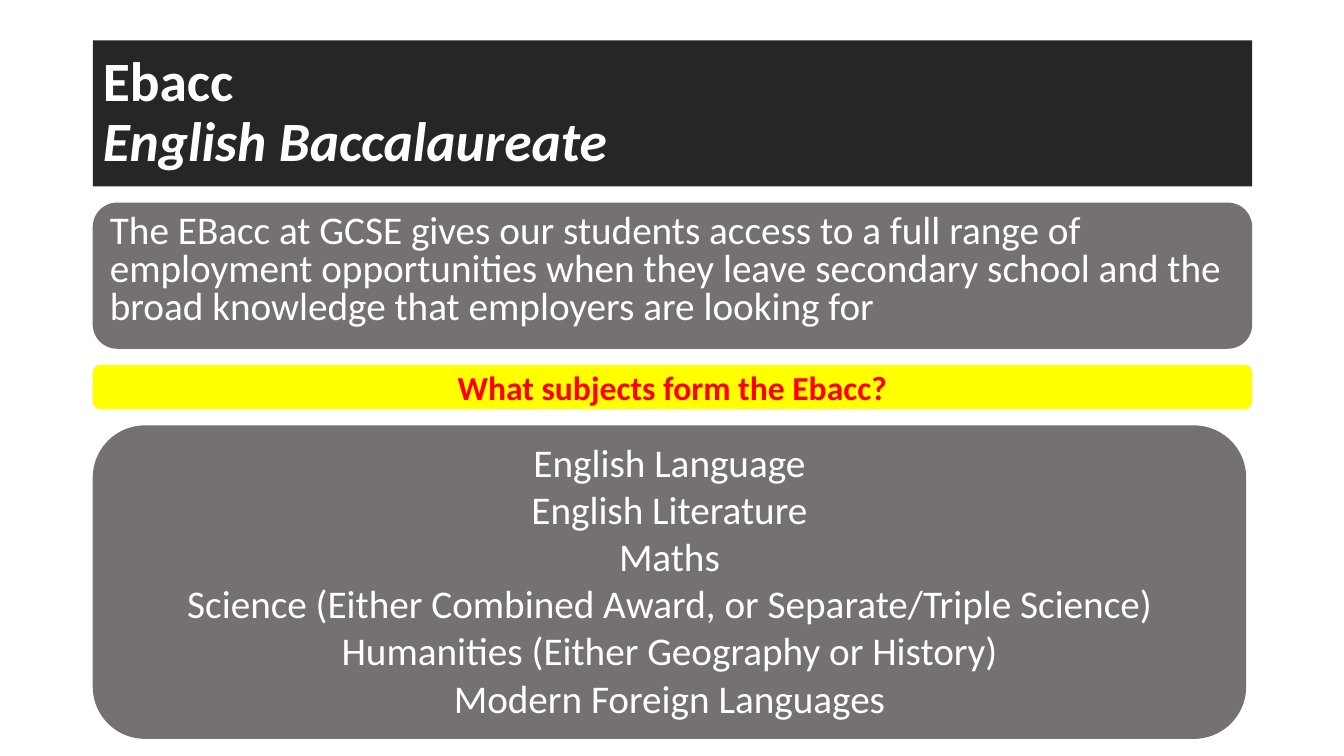
"""Build the Ebacc slide: title band, introduction, question and subject list."""
from dataclasses import dataclass

from lxml import etree
from pptx import Presentation, util as u
from pptx.dml.color import RGBColor
from pptx.enum import shapes, text
from pptx.oxml import ns

HEADING = ("Ebacc", "English Baccalaureate")
INTRODUCTION = (
    "The EBacc at GCSE gives our students access to a full range of employment "
    "opportunities when they leave secondary school and the broad knowledge "
    "that employers are looking for"
)
QUESTION = "What subjects form the Ebacc?"
SUBJECTS = [
    "English Language",
    "English Literature",
    "Maths",
    "Science (Either Combined Award, or Separate/Triple Science)",
    "Humanities (Either Geography or History)",
    "Modern Foreign Languages",
]

SLIDE_SIZE = (13.33, 7.5)
LEFT, TOP, GAP = 0.92, 0.4, 0.16
BAND_SIZES = [(11.5, 1.45), (11.5, 1.45), (11.5, 0.44), (11.44, 3.11)]


@dataclass(frozen=True)
class Theme:
    """Colours, font and type sizes of the slide."""
    font: str = "Calibri"
    dark: str = "262626"
    grey: str = "767171"
    yellow: str = "FFFF00"
    red: str = "FF0000"
    white: str = "FFFFFF"
    heading: float = 39.6
    reading: float = 28
    question: float = 24


THEME = Theme()


def band_box(row):
    """Return left, top, width and height of a band in the stack."""
    top = TOP + sum(height + GAP for _, height in BAND_SIZES[:row])
    return [u.Inches(length) for length in (LEFT, top, *BAND_SIZES[row])]


def paint(band, colour, anchor):
    """Fill a band and prepare its text frame."""
    band.fill.solid()
    band.fill.fore_color.rgb = RGBColor.from_string(colour)
    band.line.fill.background()
    frame = band.text_frame
    frame.word_wrap = True
    frame.auto_size = text.MSO_AUTO_SIZE.NONE
    frame.vertical_anchor = anchor
    return frame


def place(placeholder, row, preset):
    """Move a placeholder to its band and give it an outline."""
    placeholder.left, placeholder.top, placeholder.width, placeholder.height = band_box(row)
    outline = etree.SubElement(placeholder.element.spPr, ns.qn("a:prstGeom"), prst=preset)
    etree.SubElement(outline, ns.qn("a:avLst"))


def add_band(slide, row, preset):
    """Add a shadowless shape at its band."""
    band = slide.shapes.add_shape(preset, *band_box(row))
    band.shadow.inherit = False
    return band


def style(paragraph, size, colour, align, spacing, after=0, bold=False):
    """Set the type and spacing of a paragraph."""
    paragraph.alignment = align
    paragraph.line_spacing = spacing
    paragraph.space_before = u.Pt(0)
    paragraph.space_after = u.Pt(after)
    paragraph.font.name = THEME.font
    paragraph.font.size = u.Pt(size)
    paragraph.font.bold = bold
    paragraph.font.color.rgb = RGBColor.from_string(colour)


def main():
    """Assemble and save the slide."""
    deck = Presentation()
    deck.slide_width, deck.slide_height = map(u.Inches, SLIDE_SIZE)
    slide = deck.slides.add_slide(deck.slide_layouts[1])
    left, centre = text.PP_ALIGN.LEFT, text.PP_ALIGN.CENTER
    top, middle = text.MSO_ANCHOR.TOP, text.MSO_ANCHOR.MIDDLE

    title = slide.shapes.title
    place(title, 0, "rect")
    heading = paint(title, THEME.dark, middle).paragraphs[0]
    heading.add_run().text = HEADING[0]
    heading.add_line_break()
    full_name = heading.add_run()
    full_name.text = HEADING[1]
    full_name.font.italic = True
    style(heading, THEME.heading, THEME.white, left, 0.9, bold=True)

    body = slide.placeholders[1]
    place(body, 1, "roundRect")
    introduction = paint(body, THEME.grey, top).paragraphs[0]
    introduction.text = INTRODUCTION
    properties = introduction._p.get_or_add_pPr()
    properties.set("marL", "0")
    properties.set("indent", "0")
    etree.SubElement(properties, ns.qn("a:buNone"))
    style(introduction, THEME.reading, THEME.white, left, 0.8)

    question_band = add_band(slide, 2, shapes.MSO_SHAPE.ROUNDED_RECTANGLE)
    question = paint(question_band, THEME.yellow, middle).paragraphs[0]
    question.text = QUESTION
    style(question, THEME.question, THEME.red, centre, 1.0, bold=True)

    subject_band = add_band(slide, 3, shapes.MSO_SHAPE.FLOWCHART_ALTERNATE_PROCESS)
    subject_list = paint(subject_band, THEME.grey, middle)
    subject_list.text = "\n".join(SUBJECTS)
    for subject in subject_list.paragraphs:
        style(subject, THEME.reading, THEME.white, centre, 0.94, after=2)

    deck.save("out.pptx")


if __name__ == "__main__":
    main()
